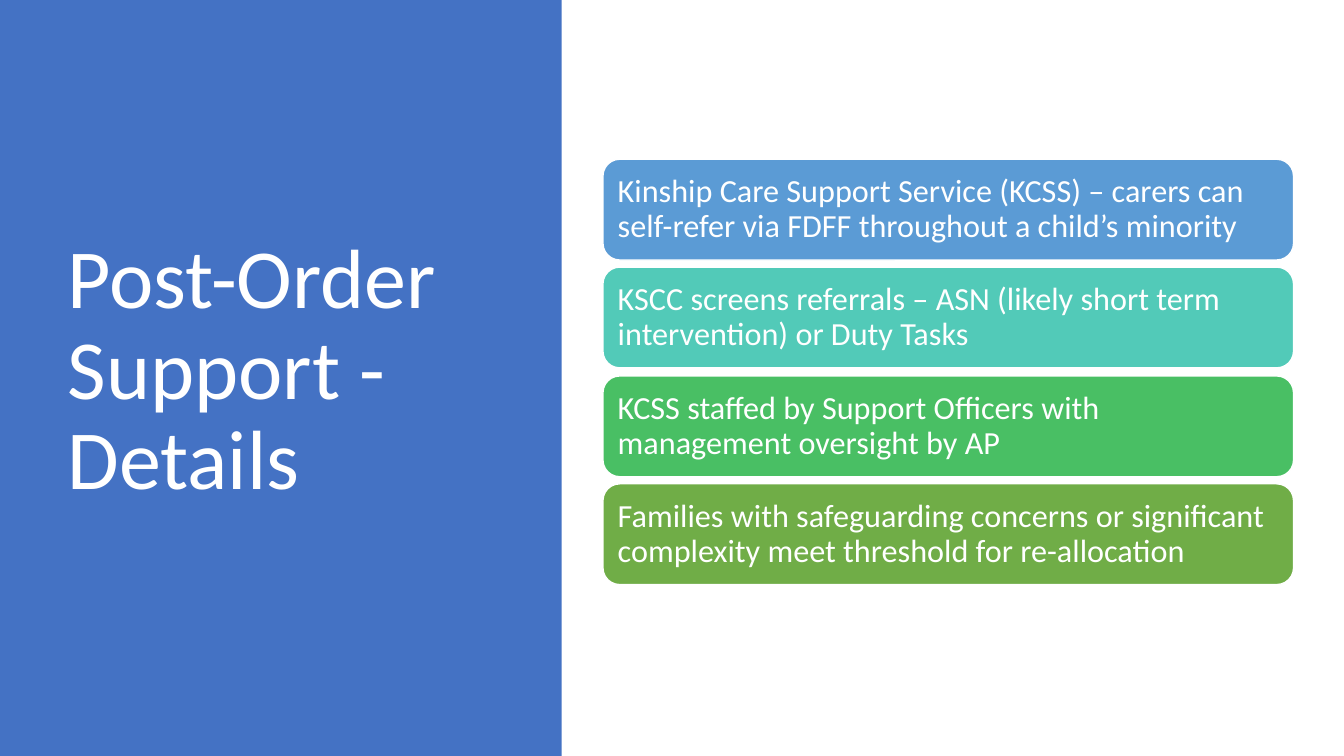
from dataclasses import dataclass

from pptx import Presentation
from pptx.dml.color import RGBColor
from pptx.enum.shapes import MSO_SHAPE
from pptx.enum.text import MSO_ANCHOR, MSO_AUTO_SIZE, PP_ALIGN
from pptx.util import Inches, Pt


@dataclass(frozen=True)
class Theme:
    font: str = "Calibri"
    white: str = "FFFFFF"
    panel: str = "4472C4"
    title_size: int = 60
    card_size: int = 23


THEME = Theme()

SUPPORT_STEPS = [
    ("Kinship Care Support Service (KCSS) – carers can self-refer via FDFF "
     "throughout a child’s minority", "5B9BD5"),
    ("KSCC screens referrals – ASN (likely short term intervention) or Duty Tasks",
     "52CAB8"),
    ("KCSS staffed by Support Officers with management oversight by AP", "49BF64"),
    ("Families with safeguarding concerns or significant complexity meet threshold "
     "for re-allocation", "70AD47"),
]


def write_text(holder, text, *, size, color=THEME.white, inset=0.1):
    frame = holder.text_frame
    frame.word_wrap = True
    frame.auto_size = MSO_AUTO_SIZE.NONE
    frame.vertical_anchor = MSO_ANCHOR.MIDDLE
    frame.margin_left = frame.margin_right = Inches(inset)
    frame.margin_top = frame.margin_bottom = Inches(inset)
    frame.text = text
    paragraph = frame.paragraphs[0]
    paragraph.alignment = PP_ALIGN.LEFT
    paragraph.line_spacing = 0.9
    font = paragraph.runs[0].font
    font.name = THEME.font
    font.size = Pt(size)
    font.color.rgb = RGBColor.from_string(color)


def add_block(slide, kind, left, top, width, height, fill):
    block = slide.shapes.add_shape(
        kind, Inches(left), Inches(top), Inches(width), Inches(height))
    block.shadow.inherit = False
    block.fill.solid()
    block.fill.fore_color.rgb = RGBColor.from_string(fill)
    block.line.fill.background()
    return block


def add_title_panel(slide):
    panel = add_block(slide, MSO_SHAPE.RECTANGLE, 0, 0, 5.57, 7.5, THEME.panel)
    slide.shapes.element.insert(2, panel.element)


def add_title(slide, text):
    title = slide.shapes.title
    title.left, title.top = Inches(0.57), Inches(0.68)
    title.width, title.height = Inches(4.16), Inches(6.02)
    write_text(title, text, size=THEME.title_size)


def add_card(slide, top, text, fill):
    card = add_block(slide, MSO_SHAPE.ROUNDED_RECTANGLE, 5.98, top, 6.85, 1, fill)
    card.line.color.rgb = RGBColor.from_string(THEME.white)
    card.line.width = Pt(1)
    write_text(card, text, size=THEME.card_size)


def main():
    presentation = Presentation()
    presentation.slide_width = Inches(13.33)
    presentation.slide_height = Inches(7.5)
    slide = presentation.slides.add_slide(presentation.slide_layouts[5])

    add_title_panel(slide)
    add_title(slide, "Post-Order Support - Details")
    first_top, pitch = 1.58, 1.073
    for index, (text, fill) in enumerate(SUPPORT_STEPS):
        add_card(slide, round(first_top + index * pitch, 2), text, fill)

    presentation.save("out.pptx")


if __name__ == "__main__":
    main()
